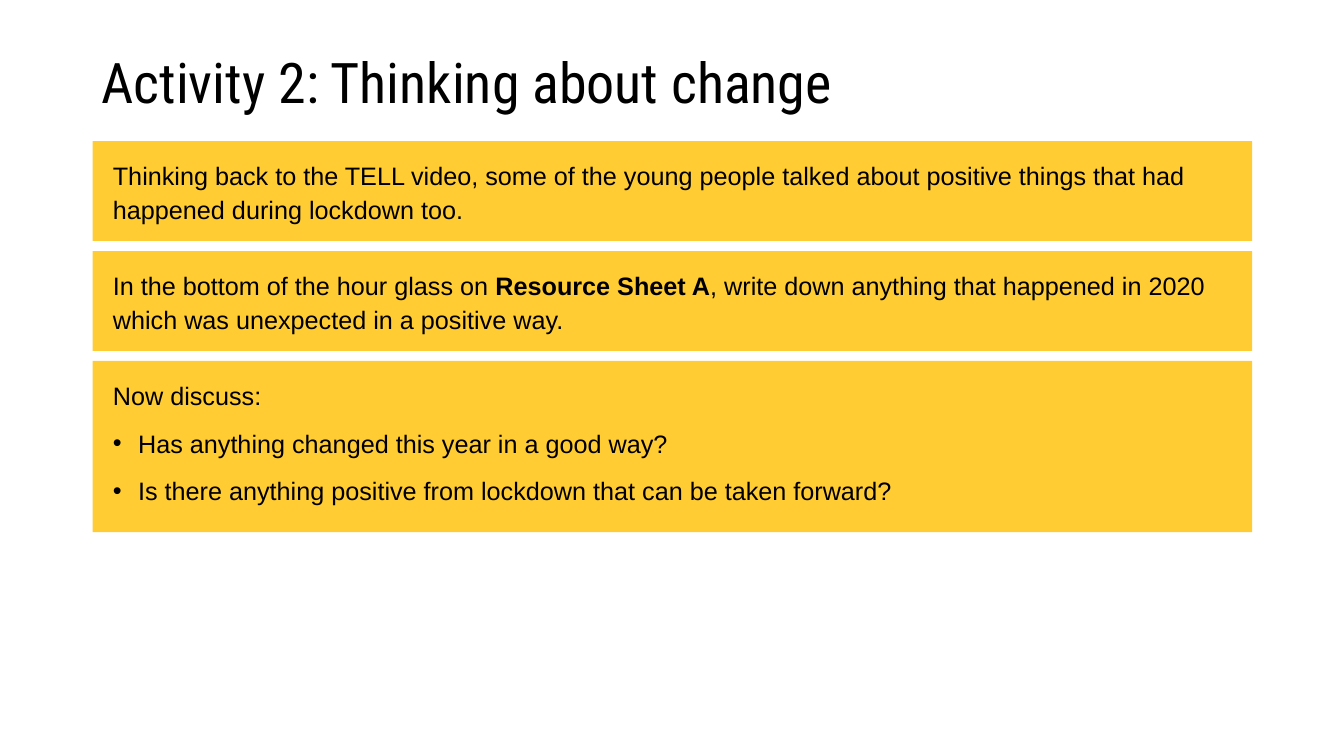
from lxml import etree
from pptx import Presentation
from pptx.dml.color import RGBColor
from pptx.enum.shapes import MSO_SHAPE
from pptx.enum.text import MSO_ANCHOR, PP_ALIGN
from pptx.oxml.ns import qn
from pptx.util import Pt

EMU_PER_PX = 9144  # 100 px to the inch
RECTANGLE = MSO_SHAPE.RECTANGLE
TOP, MIDDLE = MSO_ANCHOR.TOP, MSO_ANCHOR.MIDDLE
LEFT = PP_ALIGN.LEFT

BLACK = "000000"
YELLOW = "FFCC33"
PANEL_LEFT, PANEL_TOP, PANEL_WIDTH, PANEL_GAP = 92, 140, 1150, 10
BULLET_INDENT = 25

# Each panel: height, then paragraphs as (bulleted, [(text, bold), ...])
PANELS = [
    (99, [(False, [("Thinking back to the TELL video, some of the young people talked "
                    "about positive things that had happened during lockdown too.", False)])]),
    (99, [(False, [("In the bottom of the hour glass on ", False),
                   ("Resource Sheet A", True),
                   (", write down anything that happened in 2020 which was "
                    "unexpected in a positive way.", False)])]),
    (170, [(False, [("Now discuss:", False)]),
           (True, [("Has anything changed this year in a good way?", False)]),
           (True, [("Is there anything positive from lockdown that can be taken forward?",
                    False)])]),
]


def px(length):
    return length * EMU_PER_PX


def color(hex_string):
    return RGBColor.from_string(hex_string)


def set_font(paragraph, name, size):
    paragraph.font.name = name
    paragraph.font.size = Pt(size)
    paragraph.font.color.rgb = color(BLACK)


def add_bullet(paragraph):
    properties = paragraph._p.get_or_add_pPr()
    properties.set("marL", str(px(BULLET_INDENT)))
    properties.set("indent", str(-px(BULLET_INDENT)))
    etree.SubElement(properties, qn("a:buFont")).set("typeface", "Arial")
    etree.SubElement(properties, qn("a:buChar")).set("char", "•")


def add_title(slide, text):
    title = slide.shapes.add_textbox(px(91), px(39), px(1150), px(91))
    frame = title.text_frame
    frame.word_wrap = True
    frame.vertical_anchor = MIDDLE
    paragraph = frame.paragraphs[0]
    paragraph.text = text
    paragraph.line_spacing = 0.9
    set_font(paragraph, "Roboto Condensed", 40)


def add_panel(slide, top, height, paragraphs):
    panel = slide.shapes.add_shape(
        RECTANGLE, px(PANEL_LEFT), px(top), px(PANEL_WIDTH), px(height))
    panel.shadow.inherit = False
    panel.fill.solid()
    panel.fill.fore_color.rgb = color(YELLOW)
    panel.line.fill.background()

    frame = panel.text_frame
    frame.word_wrap = True
    frame.vertical_anchor = TOP
    frame.margin_left = frame.margin_right = px(20)
    frame.margin_top, frame.margin_bottom = px(16), px(5)
    for index, (bulleted, runs) in enumerate(paragraphs):
        paragraph = frame.add_paragraph() if index else frame.paragraphs[0]
        paragraph.alignment = LEFT
        paragraph.line_spacing = Pt(24)
        if index:
            paragraph.space_before = Pt(10)
        if bulleted:
            add_bullet(paragraph)
        set_font(paragraph, "Arial", 18)
        for text, bold in runs:
            run = paragraph.add_run()
            run.text = text
            if bold:
                run.font.bold = True


def main():
    presentation = Presentation()
    presentation.slide_width = px(1333)
    presentation.slide_height = px(750)
    slide = presentation.slides.add_slide(presentation.slide_layouts[6])

    add_title(slide, "Activity 2: Thinking about change")
    top = PANEL_TOP
    for height, paragraphs in PANELS:
        add_panel(slide, top, height, paragraphs)
        top += height + PANEL_GAP

    presentation.save("out.pptx")


if __name__ == "__main__":
    main()
